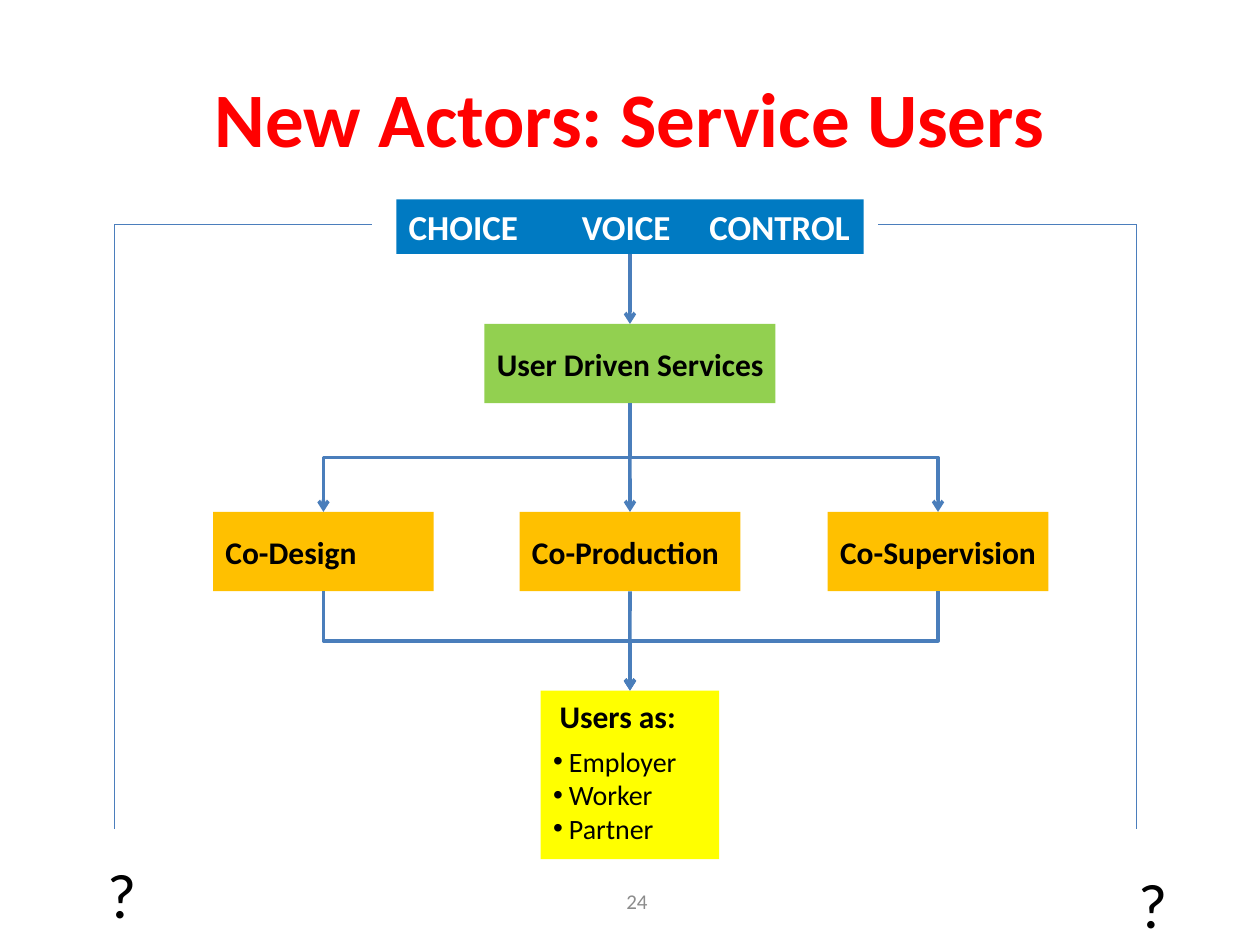
"""Build the slide on service users as new actors."""
from dataclasses import dataclass

from lxml import etree
from pptx import Presentation
from pptx.dml.color import RGBColor
from pptx.enum.shapes import MSO_CONNECTOR, MSO_SHAPE
from pptx.enum.text import MSO_ANCHOR, MSO_AUTO_SIZE, PP_ALIGN
from pptx.oxml.ns import qn
from pptx.util import Cm, Pt

RECT = MSO_SHAPE.RECTANGLE
LINE, ELBOW = MSO_CONNECTOR.STRAIGHT, MSO_CONNECTOR.ELBOW
TOP, MIDDLE = MSO_ANCHOR.TOP, MSO_ANCHOR.MIDDLE
LEFT, CENTER = PP_ALIGN.LEFT, PP_ALIGN.CENTER
FIXED = MSO_AUTO_SIZE.NONE

COLORS = {
    "red": "FF0000", "blue": "007AC2", "green": "92D050", "orange": "FFC000",
    "yellow": "FFFF00", "black": "000000", "white": "FFFFFF", "gray": "8C8C8C",
    "arrow": "4A7EBB", "frame": "4B7EBC",
}
FRAME = {"word_wrap": True, "auto_size": FIXED, "margin_left": Cm(0.25),
         "margin_right": 0, "margin_top": Cm(0.13), "margin_bottom": Cm(0.13)}
MID = 12.7
ROW = 10.32


@dataclass
class Box:
    text: str
    mid: float
    top: float
    width: float
    height: float
    fill: str
    color: str = "black"
    size: int = 18
    tabs: tuple = ()


@dataclass
class Label:
    text: str
    left: float
    top: float
    width: float
    height: float
    size: int
    color: str = "black"
    align: int = LEFT
    anchor: int = TOP


def tint(name: str) -> RGBColor:
    """Return the named colour."""
    return RGBColor.from_string(COLORS[name])


def apply(target, values: dict) -> None:
    """Set each named value on the target."""
    for key, value in values.items():
        setattr(target, key, value)


def place(shape, left: float, top: float, width: float, height: float) -> None:
    """Move and size a shape, in centimetres."""
    apply(shape, {"left": Cm(left), "top": Cm(top),
                  "width": Cm(width), "height": Cm(height)})


def write(para, text: str, size: int, color: str, bold: bool = False,
          align: int = LEFT) -> None:
    """Add formatted text to a paragraph."""
    para.alignment = align
    run = para.add_run()
    run.text = text
    apply(run.font, {"name": "Calibri", "size": Pt(size), "bold": bold})
    run.font.color.rgb = tint(color)


def paint(shape, color: str) -> None:
    """Give a shape a plain fill."""
    shape.fill.solid()
    shape.fill.fore_color.rgb = tint(color)
    shape.line.fill.background()


def draw_box(slide, box: Box):
    """Draw a filled box with bold text."""
    shape = slide.shapes.add_shape(RECT, 0, 0, 0, 0)
    place(shape, box.mid - box.width / 2, box.top, box.width, box.height)
    shape.shadow.inherit = False
    paint(shape, box.fill)
    apply(shape.text_frame, {**FRAME, "vertical_anchor": MIDDLE})
    para = shape.text_frame.paragraphs[0]
    write(para, box.text, box.size, box.color, True)
    if box.tabs:
        stops = etree.SubElement(para._p.get_or_add_pPr(), qn("a:tabLst"))
        for stop in box.tabs:
            etree.SubElement(stops, qn("a:tab"), pos=str(Cm(stop)), algn="l")
    return shape


def draw_label(slide, label: Label) -> None:
    """Draw a text box."""
    shape = slide.shapes.add_textbox(0, 0, 0, 0)
    place(shape, label.left, label.top, label.width, label.height)
    apply(shape.text_frame, {**FRAME, "vertical_anchor": label.anchor})
    write(shape.text_frame.paragraphs[0], label.text, label.size,
          label.color, align=label.align)


def draw_list(shape, head: str, items: list) -> None:
    """Fill the body with a heading and bullets."""
    place(shape, MID - 1.8, 13.92, 3.6, 3.4)
    paint(shape, "yellow")
    frame = shape.text_frame
    apply(frame, {**FRAME, "vertical_anchor": TOP})
    for num, text in enumerate([head, *items]):
        para = frame.add_paragraph() if num else frame.paragraphs[0]
        apply(para, {"space_before": Pt(0), "space_after": Pt(0 if num else 5.4)})
        write(para, text, 16 if num else 18, "black", not num)
        props = para._p.get_or_add_pPr()
        props.set("marL", str(Cm(0.32 if num else 0.13)))
        props.set("indent", str(Cm(-0.32 if num else 0)))
        if not num:
            etree.SubElement(props, qn("a:buNone"))


def draw_line(slide, kind: int, ends: tuple, color: str, width: float,
              head: bool = False):
    """Draw a line, with an arrowhead if asked."""
    line = slide.shapes.add_connector(kind, *(round(end) for end in ends))
    line.line.color.rgb = tint(color)
    line.line.width = Pt(width)
    props = line._element.spPr
    if head:
        etree.SubElement(props.find(qn("a:ln")), qn("a:tailEnd"), type="arrow")
    etree.SubElement(props, qn("a:effectLst"))
    return line


def join(slide, start, end) -> None:
    """Join two boxes from bottom to top, bent if they are not in line."""
    x1, y1 = start.left + start.width / 2, start.top + start.height
    x2, y2 = end.left + end.width / 2, end.top
    if abs(x2 - x1) < Cm(0.1):
        line = draw_line(slide, LINE, (x1, y1, x2, y2), "arrow", 2, True)
        line.begin_connect(start, 2)
        line.end_connect(end, 0)
        return
    x, y = (x1 + x2) / 2, (y1 + y2) / 2
    side = 1 if x2 > x1 else -1
    half, drop = abs(x2 - x1) / 2, side * (y2 - y1) / 2
    ends = (x + drop, y - half, x - drop, y + half)
    line = draw_line(slide, ELBOW, ends, "arrow", 2, True)
    turn = 270 if side > 0 else 90
    line._element.spPr.find(qn("a:xfrm")).set("rot", str(turn * 60000))


def main() -> None:
    """Build and save the slide."""
    deck = Presentation()
    deck.slide_width, deck.slide_height = Cm(25.4), Cm(19.05)
    slide = deck.slides.add_slide(deck.slide_layouts[1])
    title, body = slide.placeholders
    place(title, 1.27, 0.76, 22.86, 3.18)
    title.text_frame.vertical_anchor = MIDDLE
    write(title.text_frame.paragraphs[0], "New Actors: Service Users", 44,
          "red", True, CENTER)
    draw_list(body, "Users as:", ["Employer", "Worker", "Partner"])

    choice = draw_box(slide, Box("CHOICE\tVOICE\tCONTROL", MID, 4.02, 9.42, 1.1,
                                 "blue", "white", 20, (3.49, 6.06)))
    driven = draw_box(slide, Box("User Driven Services", MID, 6.53, 5.87, 1.6,
                                 "green"))
    join(slide, choice, driven)
    parts = {"Co-Design": 6.52, "Co-Production": MID, "Co-Supervision": 18.91}
    for text, mid in parts.items():
        part = draw_box(slide, Box(text, mid, ROW, 4.45, 1.6, "orange"))
        join(slide, driven, part)
        join(slide, part, body)

    high, low = 4.52, 16.71
    for near, far in ((7.49, 2.31), (17.7, 22.91)):
        for ends in ((near, high, far, high), (far, high, far, low)):
            draw_line(slide, LINE, tuple(map(Cm, ends)), "frame", 0.75)

    for label in (
        Label("?", 1.91, 17.12, 0.81, 1.8, 36),
        Label("?", 22.71, 17.32, 0.81, 1.8, 36),
        Label("24", 8.69, 17.65, 8.05, 1.02, 12, "gray", CENTER, MIDDLE),
    ):
        draw_label(slide, label)
    deck.save("out.pptx")


if __name__ == "__main__":
    main()
